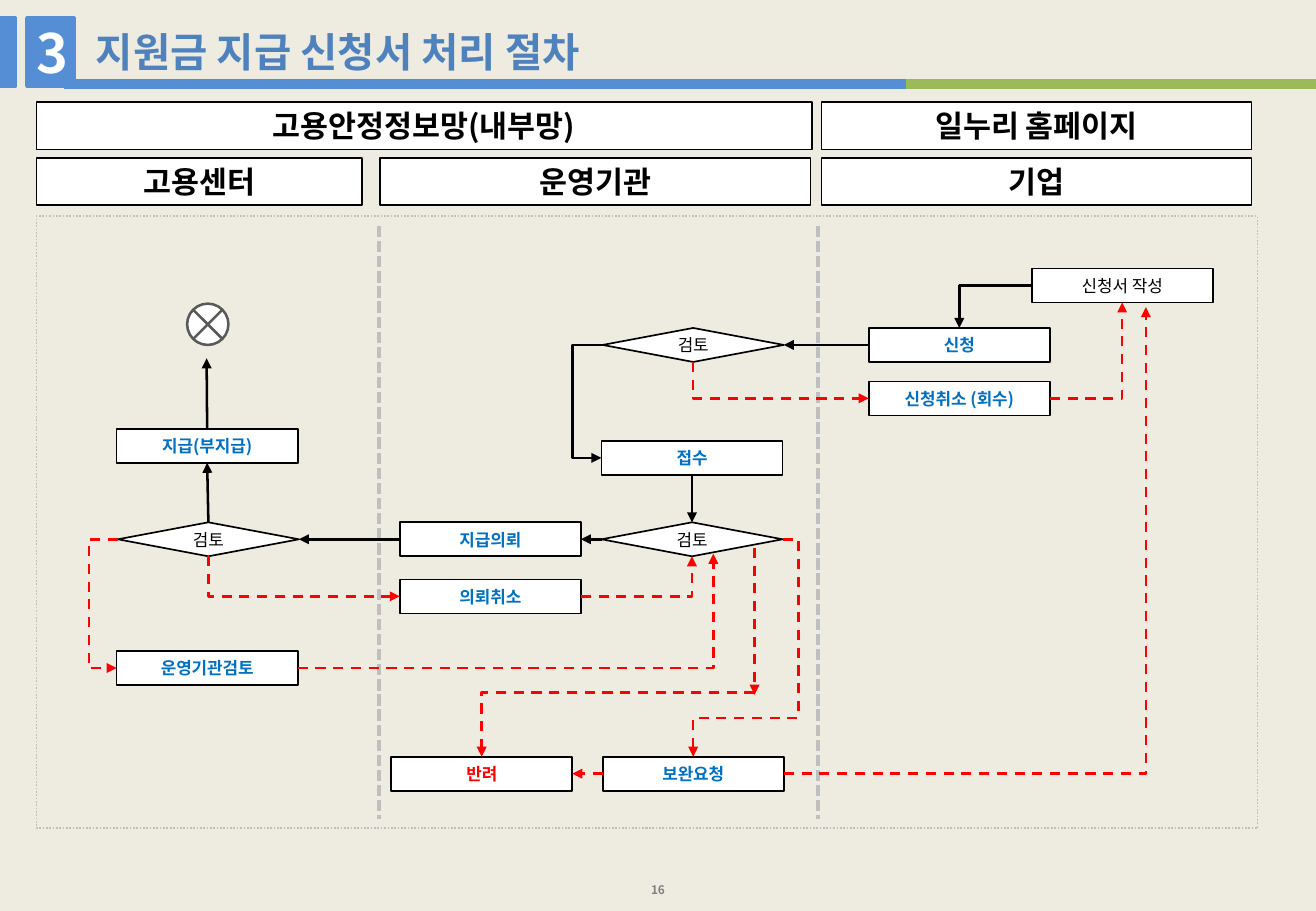
from dataclasses import dataclass

from lxml.etree import SubElement
from pptx import Presentation
from pptx.dml.color import RGBColor
from pptx.enum.dml import MSO_LINE_DASH_STYLE as Dash
from pptx.enum.shapes import MSO_CONNECTOR as Link, MSO_SHAPE as Shape
from pptx.enum.text import MSO_ANCHOR as Anchor, PP_ALIGN as Align
from pptx.oxml.ns import qn
from pptx.util import Inches, Pt


@dataclass(frozen=True)
class Theme:
    font: str = "Noto Sans CJK KR"
    paper: str = "EEECE1"
    white: str = "FFFFFF"
    black: str = "000000"
    bar: str = "558ED5"
    accent: str = "9BBB59"
    title: str = "4F81BD"
    step: str = "0070C0"
    back: str = "FF0000"
    guide: str = "BFBFBF"
    mark: str = "595959"
    footer: str = "808080"
    number_size: float = 32
    title_size: float = 24
    head_size: float = 18
    node_size: float = 10
    footer_size: float = 7


THEME = Theme()
TOP, LEFT, BOTTOM, RIGHT = range(4)
NODE_WIDTH, NODE_HEIGHT = 1.49, 0.28


def rgb(value):
    return RGBColor.from_string(value)


def write(shape, text, size, color, bold=True, align=Align.CENTER):
    para = shape.text_frame.paragraphs[0]
    para.alignment = align
    span = para.add_run()
    span.text = text
    formats = {"name": THEME.font, "size": Pt(size), "bold": bold}
    for name, value in formats.items():
        setattr(span.font, name, value)
    span.font.color.rgb = rgb(color)
    SubElement(span.font._element, qn("a:ea"), typeface=THEME.font)


def add_text(page, box, text, size, color, align=Align.LEFT):
    label = page.shapes.add_textbox(*map(Inches, box))
    label.text_frame.word_wrap = align == Align.CENTER
    write(label, text, size, color, align=align)


def style_line(line, color, width, dash=None):
    line.color.rgb = rgb(color)
    line.width = Pt(width)
    if dash:
        line.dash_style = dash


def add_box(page, box, fill=THEME.white, line=THEME.black, width=1, dash=None, kind=Shape.RECTANGLE):
    shape = page.shapes.add_shape(kind, *map(Inches, box))
    shape.shadow.inherit = False
    if fill:
        shape.fill.solid()
        shape.fill.fore_color.rgb = rgb(fill)
    else:
        shape.fill.background()
    style_line(shape.line, line, width, dash)
    shape.text_frame.vertical_anchor = Anchor.MIDDLE
    return shape


def add_line(page, start, end, color, width, dash=None, kind=Link.STRAIGHT):
    line = page.shapes.add_connector(kind, *map(Inches, (*start, *end)))
    style_line(line.line, color, width, dash)
    SubElement(line._element.spPr, qn("a:effectLst"))
    return line


def bend(line, bend_x, bend_y):
    """Turn the elbow at bend_x and bend_y; without them it has one corner."""
    width, height = line.end_x - line.begin_x, line.end_y - line.begin_y
    turns = []
    if bend_x is not None:
        turns.append((Inches(bend_x) - line.begin_x) / width)
    if bend_y is not None:
        turns.append((Inches(bend_y) - line.begin_y) / height)
    geometry = line._element.spPr.find(qn("a:prstGeom"))
    geometry.set("prst", f"bentConnector{2 + len(turns)}")
    guides = geometry.find(qn("a:avLst"))
    if guides is None:
        guides = SubElement(geometry, qn("a:avLst"))
    for number, turn in enumerate(turns, 1):
        SubElement(guides, qn("a:gd"), name=f"adj{number}", fmla=f"val {round(turn * 100000)}")


def add_arrow(page, start, end, back=False, elbow=False, bend_x=None, bend_y=None):
    """Join two ends, each a point or a (shape, side) pair."""
    points = []
    for first, second in (start, end):
        points.append((0, 0) if hasattr(first, "shape_id") else (first, second))
    kind = Link.ELBOW if elbow else Link.STRAIGHT
    color, dash = (THEME.back, Dash.DASH) if back else (THEME.black, None)
    line = add_line(page, *points, color, 1.5, dash, kind)
    for target, join in ((start, line.begin_connect), (end, line.end_connect)):
        if hasattr(target[0], "shape_id"):
            join(*target)
    if elbow:
        bend(line, bend_x, bend_y)
    SubElement(line.line._get_or_add_ln(), qn("a:tailEnd"), type="triangle")


def add_title(page, left, top):
    for x, width in ((0, 0.13), (0.22, 0.39)):
        add_box(page, (left + x, top, width, 0.56), THEME.bar, THEME.bar, 2)
    rule = top + 0.54
    add_line(page, (left + 0.53, rule), (left + 8.49, rule), THEME.bar, 6)
    add_line(page, (left + 7.46, rule), (left + 10.83, rule), THEME.accent, 6)
    add_text(page, (left + 0.69, top + 0.02, 4.33, 0.5), "지원금 지급 신청서 처리 절차",
             THEME.title_size, THEME.title)
    add_text(page, (left + 0.2, top - 0.04, 0.46, 0.64), "3", THEME.number_size, THEME.white)


def add_headings(page, left, top):
    headings = (
        ("고용안정정보망(내부망)", 0, 0, 6.38),
        ("일누리 홈페이지", 6.46, 0, 3.54),
        ("고용센터", 0, 0.46, 2.68),
        ("운영기관", 2.83, 0.46, 3.54),
        ("기업", 6.46, 0.46, 3.54),
    )
    for text, x, y, width in headings:
        box = add_box(page, (left + x, top + y, width, 0.39))
        write(box, text, THEME.head_size, THEME.black)


def add_end_mark(page, left, top, size=0.34):
    add_box(page, (left, top, size, size), THEME.white, THEME.mark, 1.5, kind=Shape.OVAL)
    near, far = 0.05, size - 0.05
    for y_start, y_end in ((near, far), (far, near)):
        add_line(page, (left + near, top + y_start), (left + far, top + y_end), THEME.mark, 1.5)


def add_flow(page, left, top, width, height):
    def at(x, y):
        return left + x, top + y

    def node(text, x, y, color=THEME.step, kind=Shape.RECTANGLE):
        shape = add_box(page, (*at(x, y), NODE_WIDTH, NODE_HEIGHT), kind=kind)
        write(shape, text, THEME.node_size, color, bold=color != THEME.black)
        return shape

    def decision(x, y):
        return node("검토", x, y, THEME.black, Shape.DIAMOND)

    add_box(page, (left, top, width, height), None, THEME.guide, 1, Dash.ROUND_DOT)
    for x in (2.82, 6.43):
        add_line(page, at(x, 0.08), at(x, height - 0.08), THEME.guide, 2.25, Dash.SQUARE_DOT)

    draft = node("신청서 작성", 8.19, 0.43, THEME.black)
    apply = node("신청", 6.85, 0.92)
    cancel = node("신청취소 (회수)", 6.85, 1.36)
    check = decision(4.66, 0.92)
    receive = node("접수", 4.65, 1.85)
    review = decision(4.65, 2.52)
    request = node("지급의뢰", 2.99, 2.52)
    withdraw = node("의뢰취소", 2.99, 2.99)
    supplement = node("보완요청", 4.66, 4.45)
    reject = node("반려", 2.92, 4.45, THEME.back)
    pay = node("지급(부지급)", 0.66, 1.75)
    approval = decision(0.67, 2.52)
    agency = node("운영기관검토", 0.66, 3.58)
    add_end_mark(page, *at(1.24, 0.72))

    straight = (
        ((apply, LEFT), (check, RIGHT), False),
        ((receive, BOTTOM), (review, TOP), False),
        ((review, LEFT), (request, RIGHT), False),
        ((request, LEFT), (approval, RIGHT), False),
        ((approval, TOP), (pay, BOTTOM), False),
        ((pay, TOP), at(1.4, 1.17), False),
        (at(5.91, 2.73), at(5.91, 3.94), True),
        ((supplement, LEFT), (reject, RIGHT), True),
    )
    for start, end, back in straight:
        add_arrow(page, start, end, back)

    check_x, approval_x = (left + x + NODE_WIDTH / 2 for x in (4.66, 0.67))
    bent = (
        ((draft, LEFT), (apply, TOP), False, None, None),
        ((check, LEFT), (receive, LEFT), False, left + 4.41, None),
        ((check, BOTTOM), (cancel, LEFT), True, check_x, None),
        ((cancel, RIGHT), (draft, BOTTOM), True, None, None),
        ((approval, BOTTOM), (withdraw, LEFT), True, approval_x, None),
        ((withdraw, RIGHT), (review, BOTTOM), True, None, None),
        ((approval, LEFT), (agency, LEFT), True, left + 0.43, None),
        ((agency, RIGHT), at(5.57, 2.78), True, None, None),
        ((review, RIGHT), (supplement, TOP), True, left + 6.27, top + 4.13),
        (at(5.91, 3.92), (reject, TOP), True, None, None),
        ((supplement, RIGHT), at(9.13, 0.75), True, None, None),
    )
    for start, end, back, bend_x, bend_y in bent:
        add_arrow(page, start, end, back, True, bend_x, bend_y)


def main():
    deck = Presentation()
    deck.slide_width, deck.slide_height = Inches(10.83), Inches(7.5)
    page = deck.slides.add_slide(deck.slide_layouts[6])
    page.background.fill.solid()
    page.background.fill.fore_color.rgb = rgb(THEME.paper)
    add_title(page, 0, 0.15)
    add_headings(page, 0.3, 0.84)
    add_flow(page, 0.3, 1.78, 10.05, 5.04)
    add_text(page, (5.1, 7.22, 0.63, 0.22), "16", THEME.footer_size, THEME.footer, Align.CENTER)
    deck.save("out.pptx")


if __name__ == "__main__":
    main()
